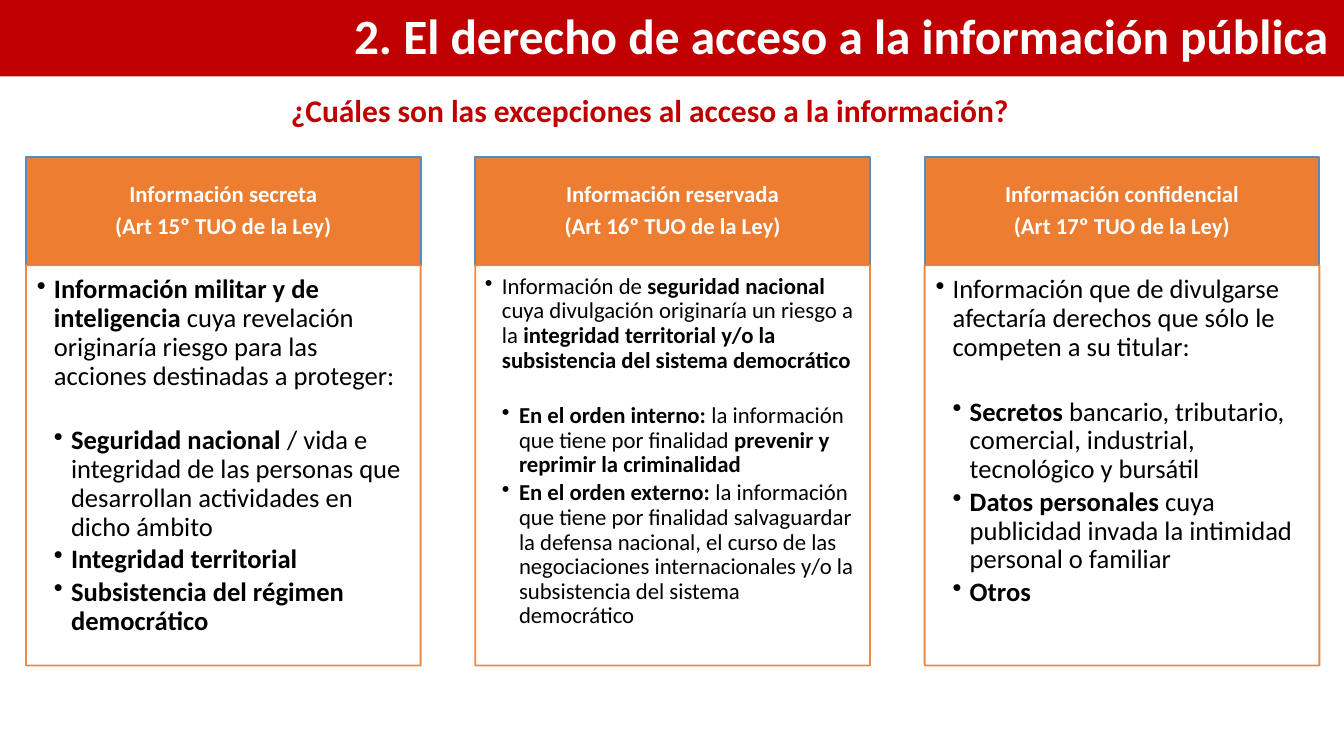
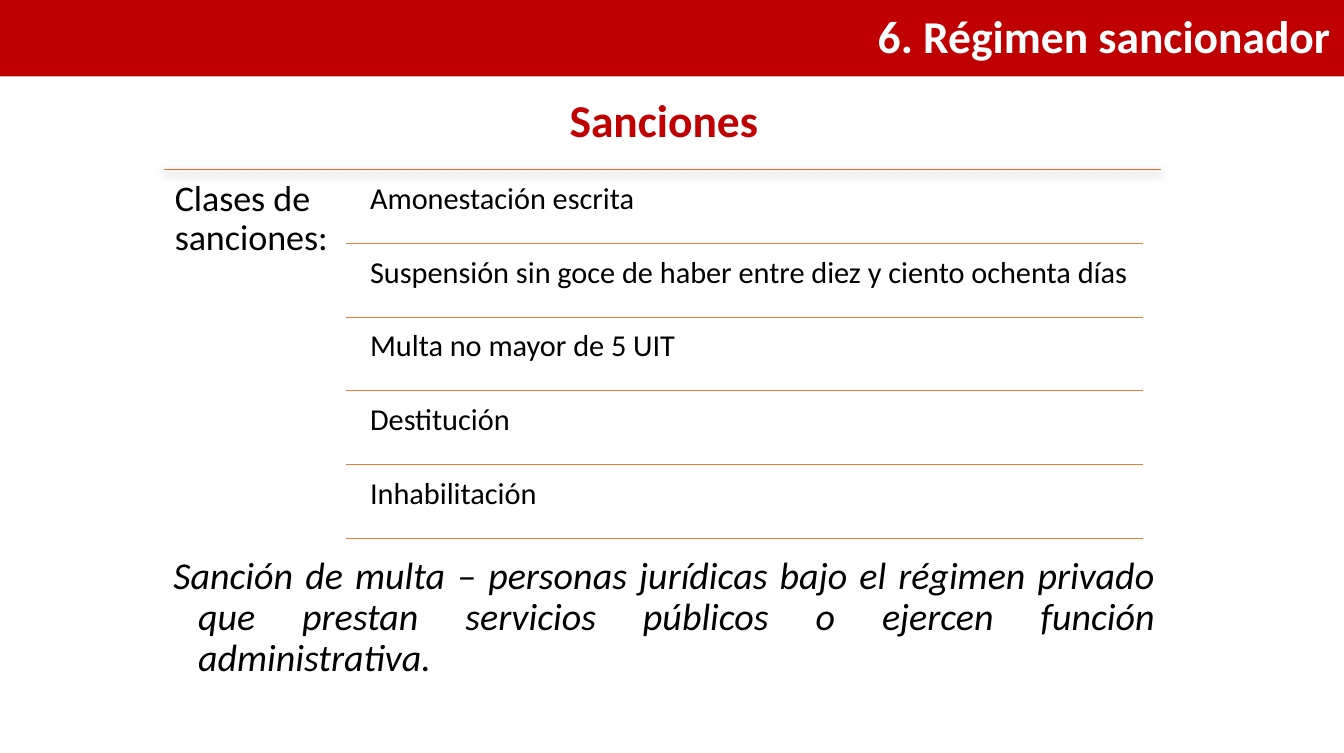
"""Build two slides on access to public information and its sanctions."""
from dataclasses import dataclass
from typing import Any

from lxml import etree
from pptx import Presentation
from pptx.dml.color import RGBColor
from pptx.enum.shapes import MSO_CONNECTOR, MSO_SHAPE
from pptx.enum.text import MSO_ANCHOR, MSO_AUTO_SIZE, PP_ALIGN
from pptx.oxml.ns import qn
from pptx.util import Inches, Pt

LEFT, CENTER, RIGHT, JUSTIFY = PP_ALIGN.LEFT, PP_ALIGN.CENTER, PP_ALIGN.RIGHT, PP_ALIGN.JUSTIFY
TOP, MIDDLE = MSO_ANCHOR.TOP, MSO_ANCHOR.MIDDLE
NO_FIT = MSO_AUTO_SIZE.NONE
RECTANGLE = MSO_SHAPE.RECTANGLE
STRAIGHT = MSO_CONNECTOR.STRAIGHT

FONT = "Calibri"
RED, ORANGE, BLUE, RUST = "C00000", "ED7D31", "538DC1", "D7712C"
WHITE, BLACK = "FFFFFF", "000000"
SLIDE_WIDTH, SLIDE_HEIGHT = 9.84, 5.51
BAND_HEIGHT = 0.56
HEADING_TOP, HEADING_HEIGHT = 0.67, 0.34

COLUMN_LEFT, COLUMN_STEP, COLUMN_WIDTH = 0.19, 3.29, 2.89
HEADER_TOP, HEADER_HEIGHT, DETAIL_HEIGHT = 1.15, 0.79, 2.93
BULLET_INDENT = 0.125

ROW_TOP, ROW_STEP, ROW_HEIGHT, RULE_OFFSET = 1.27, 0.54, 0.52, 0.51
SANCTIONS = (
    "Amonestación escrita",
    "Suspensión sin goce de haber entre diez y ciento ochenta días",
    "Multa no mayor de 5 UIT",
    "Destitución",
    "Inhabilitación",
)


@dataclass(frozen=True)
class TextStyle:
    """Look of a paragraph, with lengths in inches and sizes in points."""

    size: float
    color: str = BLACK
    bold: bool = False
    italic: bool = False
    align: Any = LEFT
    spacing: float = 0.9
    after: float = 0
    level: int = 0
    indent: float = 0
    hanging: float = 0
    bullet: str = ""


@dataclass(frozen=True)
class ExceptionColumn:
    """One exception; double asterisks enclose bold words."""

    title: str
    article: str
    size: float
    insets: tuple[float, float, float, float]
    summary: str
    cases: tuple[str, ...]


EXCEPTIONS = (
    ExceptionColumn(
        "Información secreta", "(Art 15º TUO de la Ley)", 14, (0.08, 0.08, 0.11, 0.12),
        "**Información militar y de inteligencia **cuya revelación originaría riesgo "
        "para las acciones destinadas a proteger:",
        (
            "**Seguridad nacional **/ vida e integridad de las personas que desarrollan "
            "actividades en dicho ámbito",
            "**Integridad territorial**",
            "**Subsistencia del régimen democrático**",
        ),
    ),
    ExceptionColumn(
        "Información reservada", "(Art 16º TUO de la Ley)", 12, (0.07, 0.07, 0.09, 0.1),
        "Información de **seguridad nacional** cuya divulgación originaría un riesgo a la "
        "**integridad territorial y/o la subsistencia del sistema democrático**",
        (
            "**En el orden interno: **la información que tiene por finalidad "
            "**prevenir y reprimir la criminalidad**",
            "**En el orden externo: **la información que tiene por finalidad salvaguardar "
            "la defensa nacional, el curso de las negociaciones internacionales y/o la "
            "subsistencia del sistema democrático",
        ),
    ),
    ExceptionColumn(
        "Información confidencial", "(Art 17º TUO de la Ley)", 14, (0.08, 0.08, 0.11, 0.12),
        "Información que de divulgarse afectaría derechos que sólo le competen a su titular:",
        (
            "**Secretos** bancario, tributario, comercial, industrial, tecnológico y bursátil",
            "**Datos personales **cuya publicidad invada la intimidad personal o familiar",
            "**Otros**",
        ),
    ),
)


def rgb(code: str) -> RGBColor:
    """Turn a hex string into a colour."""
    return RGBColor.from_string(code)


def apply_format(target: Any, values: dict[str, Any]) -> None:
    """Set each named attribute of the target."""
    for name, value in values.items():
        setattr(target, name, value)


def place(shape: Any, left: float, top: float, width: float, height: float) -> None:
    """Move and size a shape, in inches."""
    apply_format(shape, {
        "left": Inches(left), "top": Inches(top),
        "width": Inches(width), "height": Inches(height),
    })


def write(shape: Any, lines: list[tuple[str, TextStyle]], anchor: Any = TOP,
          insets: tuple[float, float, float, float] = (0.1, 0.05, 0.1, 0.05)) -> None:
    """Fill a shape with styled paragraphs."""
    frame = shape.text_frame
    left, top, right, bottom = map(Inches, insets)
    apply_format(frame, {
        "word_wrap": True, "auto_size": NO_FIT, "vertical_anchor": anchor,
        "margin_left": left, "margin_top": top,
        "margin_right": right, "margin_bottom": bottom,
    })
    for index, (text, style) in enumerate(lines):
        paragraph = frame.add_paragraph() if index else frame.paragraphs[0]
        properties = paragraph._p.get_or_add_pPr()
        properties.set("marL", str(Inches(style.indent)))
        properties.set("indent", str(Inches(-style.hanging)))
        if style.bullet:
            etree.SubElement(properties, qn("a:buChar")).set("char", style.bullet)
        else:
            etree.SubElement(properties, qn("a:buNone"))
        apply_format(paragraph, {
            "alignment": style.align, "line_spacing": style.spacing, "level": style.level,
            "space_before": Pt(0), "space_after": Pt(style.after),
        })
        for part, words in enumerate(text.split("**")):
            if words:
                run = paragraph.add_run()
                run.text = words
                apply_format(run.font, {
                    "name": FONT, "size": Pt(style.size),
                    "bold": style.bold or part % 2 == 1, "italic": style.italic,
                })
                run.font.color.rgb = rgb(style.color)


def add_text(slide: Any, box: tuple[float, float, float, float], text: str,
             style: TextStyle, inset: float) -> None:
    """Add a text box with one paragraph."""
    text_box = slide.shapes.add_textbox(*map(Inches, box))
    write(text_box, [(text, style)], insets=(inset, 0.05 if inset == 0.1 else inset, inset, inset))


def add_panel(slide: Any, box: tuple[float, float, float, float], fill: str,
              outline: str) -> Any:
    """Add an outlined rectangle."""
    panel = slide.shapes.add_shape(RECTANGLE, *map(Inches, box))
    panel.shadow.inherit = False
    panel.fill.solid()
    panel.fill.fore_color.rgb = rgb(fill)
    panel.line.color.rgb = rgb(outline)
    panel.line.width = Pt(1)
    return panel


def add_rule(slide: Any, left: float, right: float, top: float, color: str) -> Any:
    """Add a thin horizontal line and return its effect list."""
    rule = slide.shapes.add_connector(
        STRAIGHT, Inches(left), Inches(top), Inches(right), Inches(top))
    rule.line.color.rgb = rgb(color)
    rule.line.width = Pt(0.5)
    return etree.SubElement(rule._element.spPr, qn("a:effectLst"))


def add_soft_shadow(effects: Any) -> None:
    """Cast a soft shadow downwards."""
    shadow = etree.SubElement(effects, qn("a:outerShdw"), {
        "blurRad": str(Pt(4.5)), "dist": str(Pt(1.5)), "dir": "5400000", "rotWithShape": "0"})
    shade = etree.SubElement(shadow, qn("a:srgbClr"), val=BLACK)
    etree.SubElement(shade, qn("a:alpha"), val="63000")


def add_titled_slide(deck: Any, title: str, size: float) -> Any:
    """Add a slide with the red title band."""
    slide = deck.slides.add_slide(deck.slide_layouts[1])
    band = slide.shapes.title
    place(band, 0, 0, SLIDE_WIDTH, BAND_HEIGHT)
    band.fill.solid()
    band.fill.fore_color.rgb = rgb(RED)
    write(band, [(title, TextStyle(size, WHITE, bold=True, align=RIGHT))], MIDDLE)
    return slide


def add_exception(slide: Any, left: float, column: ExceptionColumn) -> None:
    """Draw the header and the details of one exception."""
    header = add_panel(slide, (left, HEADER_TOP, COLUMN_WIDTH, HEADER_HEIGHT), ORANGE, BLUE)
    heading = TextStyle(12, WHITE, bold=True, align=CENTER, after=4.2)
    write(header, [(column.title, heading), (column.article, heading)], MIDDLE)

    details = add_panel(
        slide, (left, HEADER_TOP + HEADER_HEIGHT, COLUMN_WIDTH, DETAIL_HEIGHT), WHITE, ORANGE)
    for shade in list(details._element.spPr.iter(qn("a:srgbClr"))):
        etree.SubElement(shade, qn("a:alpha"), val="90000")
    summary = TextStyle(column.size, after=round(1.36 * column.size, 1),
                        indent=BULLET_INDENT, hanging=BULLET_INDENT, bullet="•")
    case = TextStyle(column.size, after=round(0.15 * column.size, 1), level=1,
                     indent=2 * BULLET_INDENT, hanging=BULLET_INDENT, bullet="•")
    write(details, [(column.summary, summary), *((text, case) for text in column.cases)],
          insets=column.insets)


def build_exceptions(deck: Any) -> None:
    """Build the slide on exceptions to access."""
    slide = add_titled_slide(deck, "2. El derecho de acceso a la información pública", 26)
    question = slide.placeholders[1]
    place(question, 2.03, HEADING_TOP, 6.05, HEADING_HEIGHT)
    write(question, [("¿Cuáles son las excepciones al acceso a la información?",
                      TextStyle(16.6, RED, bold=True, spacing=0.8))])
    for index, column in enumerate(EXCEPTIONS):
        add_exception(slide, COLUMN_LEFT + index * COLUMN_STEP, column)


def build_sanctions(deck: Any) -> None:
    """Build the slide on kinds of sanctions."""
    slide = add_titled_slide(deck, "6. Régimen sancionador", 24)
    add_text(slide, (0.75, HEADING_TOP, 8.22, HEADING_HEIGHT), "Sanciones",
             TextStyle(24, RED, bold=True, align=CENTER), 0.1)
    fine = slide.placeholders[1]
    place(fine, 1.17, 4.31, 7.39, 0.42)
    write(fine, [(
        "Sanción de multa – personas jurídicas bajo el régimen privado que prestan "
        "servicios públicos o ejercen función administrativa.",
        TextStyle(20, italic=True, align=JUSTIFY, indent=0.18, hanging=0.18),
    )], MIDDLE)

    add_soft_shadow(add_rule(slide, 1.2, 8.5, 1.24, RUST))
    add_text(slide, (1.2, 1.24, 1.33, 2.73), "Clases de sanciones:", TextStyle(19), 0.08)
    for index, sanction in enumerate(SANCTIONS):
        top = ROW_TOP + index * ROW_STEP
        add_text(slide, (2.64, top, 5.73, ROW_HEIGHT), sanction, TextStyle(16), 0.07)
        add_rule(slide, 2.53, 8.37, top + RULE_OFFSET, ORANGE)


def main() -> None:
    """Build and save the presentation."""
    deck = Presentation()
    apply_format(deck, {
        "slide_width": Inches(SLIDE_WIDTH), "slide_height": Inches(SLIDE_HEIGHT)})
    build_exceptions(deck)
    build_sanctions(deck)
    deck.save("out.pptx")


if __name__ == "__main__":
    main()
